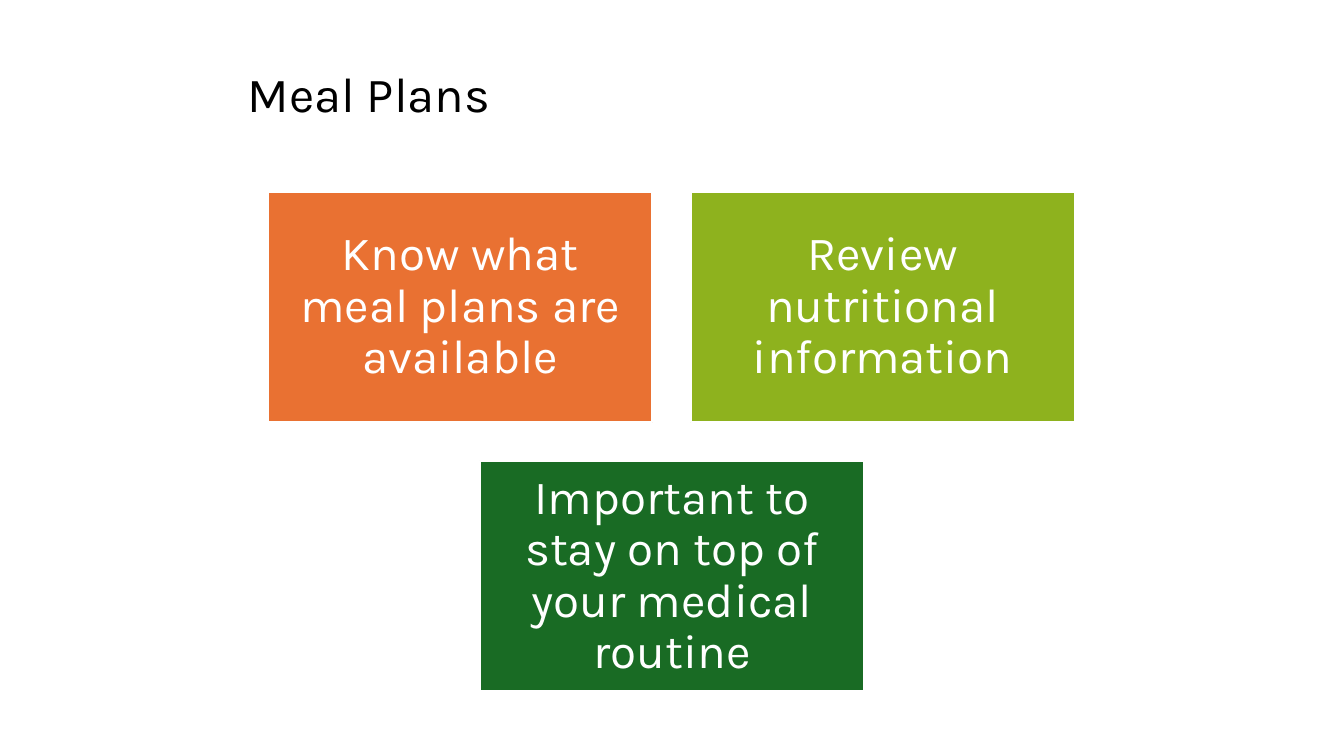
from pptx import Presentation
from pptx.dml.color import RGBColor
from pptx.enum.shapes import MSO_SHAPE
from pptx.enum.text import MSO_ANCHOR, PP_ALIGN
from pptx.util import Inches, Pt

COLORS = {
    "black": "000000",
    "white": "FFFFFF",
    "orange": "E97132",
    "lime": "8EB21E",
    "green": "196B24",
}
CARD_WIDTH, CARD_HEIGHT = 3.81, 2.29
CARD_INSET = Inches(0.14)
CARDS = [
    (2.66, 1.9, "orange", "Know what meal plans are available"),
    (6.85, 1.9, "lime", "Review nutritional information"),
    (4.76, 4.57, "green", "Important to stay on top of your medical routine"),
]


def color(name):
    return RGBColor.from_string(COLORS[name])


def write_text(shape, text, size, color_name, alignment, frame_format):
    text_frame = shape.text_frame
    for name, value in frame_format.items():
        setattr(text_frame, name, value)
    paragraph = text_frame.paragraphs[0]
    paragraph.text = text
    paragraph.alignment = alignment
    paragraph.line_spacing = 0.9
    font = paragraph.runs[0].font
    for name, value in {"name": "Karla", "size": Pt(size)}.items():
        setattr(font, name, value)
    font.color.rgb = color(color_name)


presentation = Presentation()
presentation.slide_width = Inches(13.33)
presentation.slide_height = Inches(7.5)
slide = presentation.slides.add_slide(presentation.slide_layouts[6])

title_format = {"word_wrap": True, "vertical_anchor": MSO_ANCHOR.MIDDLE}
margins = ("margin_left", "margin_top", "margin_right", "margin_bottom")
card_format = {**title_format, **dict.fromkeys(margins, CARD_INSET)}

title = slide.shapes.add_textbox(Inches(2.36), Inches(0.37), Inches(8.62), Inches(1.18))
write_text(title, "Meal Plans", 35, "black", PP_ALIGN.LEFT, title_format)

for left, top, fill_name, text in CARDS:
    card = slide.shapes.add_shape(
        MSO_SHAPE.RECTANGLE,
        Inches(left), Inches(top), Inches(CARD_WIDTH), Inches(CARD_HEIGHT),
    )
    card.shadow.inherit = False
    card.fill.solid()
    card.fill.fore_color.rgb = color(fill_name)
    card.line.color.rgb = color("white")
    card.line.width = Pt(1.5)
    write_text(card, text, 34, "white", PP_ALIGN.CENTER, card_format)

presentation.save("out.pptx")
